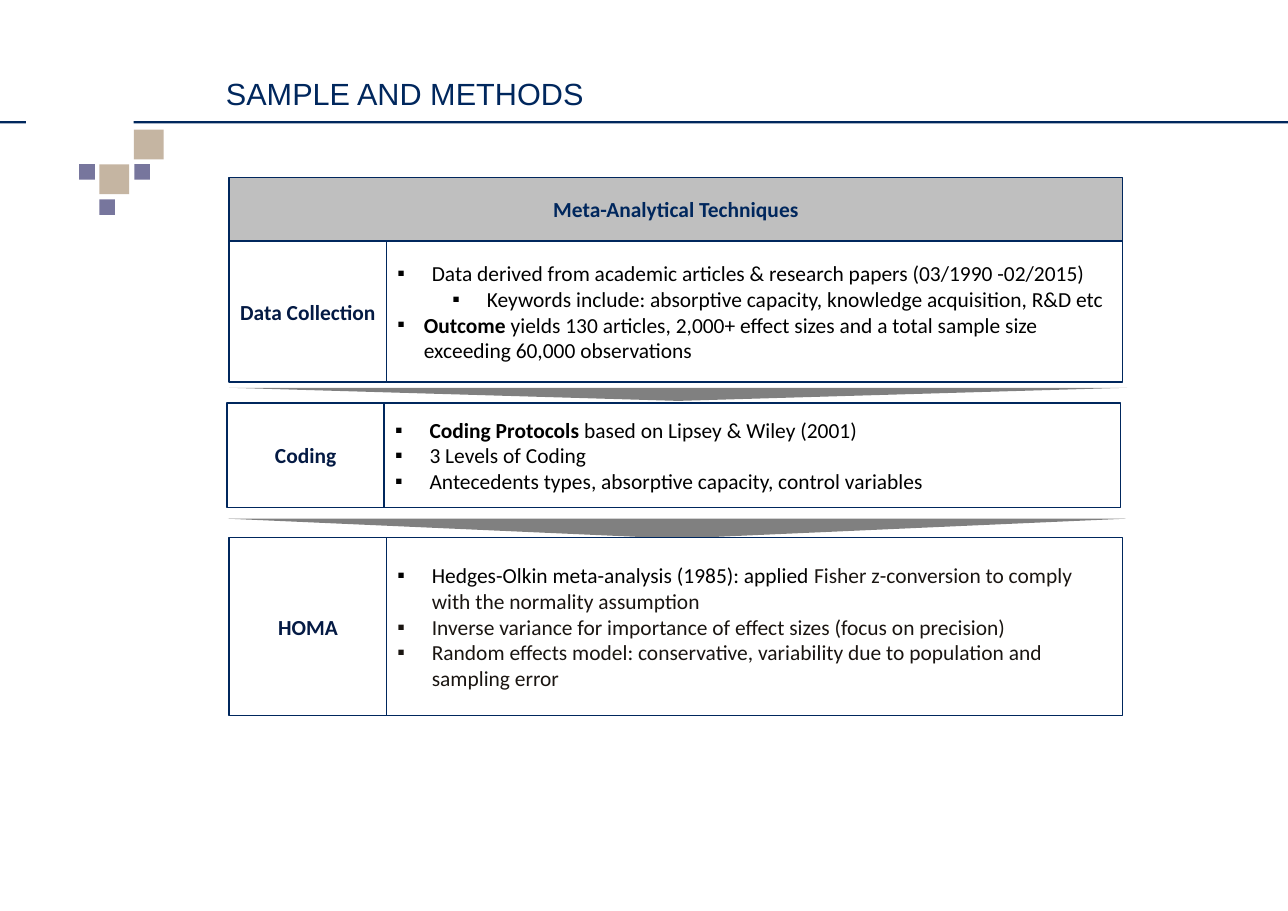
import dataclasses
import pptx
import pptx.dml.color
import pptx.enum.shapes
import pptx.enum.text
import pptx.oxml
import pptx.oxml.ns
import pptx.util

Pt = pptx.util.Pt
Shape = pptx.enum.shapes.MSO_SHAPE
Align = pptx.enum.text.PP_ALIGN
Anchor = pptx.enum.text.MSO_ANCHOR


@dataclasses.dataclass(frozen=True)
class Theme:
    navy: str = "00275D"
    label: str = "041A44"
    black: str = "000000"
    soft: str = "1A1511"
    white: str = "FFFFFF"
    silver: str = "BFBFBF"
    gray: str = "808080"
    tan: str = "C5B5A2"
    mauve: str = "77769D"
    head: str = "Arial"
    body: str = "Calibri"
    large: float = 20
    small: float = 14
    rule: float = 1


THEME = Theme()


@dataclasses.dataclass
class Item:
    """A list entry; each run is text, bold flag and an optional own colour."""
    runs: list
    left: float = 22.5
    hang: float = 22.5
    level: int = 0
    color: str = THEME.black


def tint(code):
    return pptx.dml.color.RGBColor.from_string(code)


class Page:
    def __init__(self, slide, theme):
        self.slide = slide
        self.theme = theme

    def font(self, para, name, size, color, bold=None):
        para.font.name = name
        para.font.size = Pt(size)
        para.font.color.rgb = tint(color)
        para.font.bold = bold

    def frame(self, shape, anchor, side=0.0):
        """Prepare the text frame with equal side margins and none above or below."""
        text = shape.text_frame
        text.word_wrap = True
        text.vertical_anchor = anchor
        text.margin_left = text.margin_right = Pt(side)
        text.margin_top = text.margin_bottom = 0
        return text

    def title(self, words, left, top, width, height):
        shape = self.slide.shapes.title
        shape.left, shape.top = Pt(left), Pt(top)
        shape.width, shape.height = Pt(width), Pt(height)
        text = self.frame(shape, Anchor.BOTTOM)
        text.text = words
        para = text.paragraphs[0]
        para.alignment = Align.LEFT
        self.font(para, self.theme.head, self.theme.large, self.theme.navy)

    def block(self, left, top, width, height, fill, line=None, kind=Shape.RECTANGLE):
        shape = self.slide.shapes.add_shape(
            kind, Pt(left), Pt(top), Pt(width), Pt(height))
        shape.shadow.inherit = False
        shape.fill.solid()
        shape.fill.fore_color.rgb = tint(fill)
        if line:
            shape.line.color.rgb = tint(line)
            shape.line.width = Pt(self.theme.rule)
        else:
            shape.line.fill.background()
        return shape

    def wedge(self, left, top, width, height):
        """Draw a flat triangle that points down to the next row."""
        shape = self.block(left, top, width, height, self.theme.gray,
                           kind=Shape.ISOSCELES_TRIANGLE)
        shape.rotation = 180

    def label(self, words, left, top, width, height, fill, color):
        shape = self.block(left, top, width, height, fill, self.theme.navy)
        text = self.frame(shape, Anchor.MIDDLE)
        text.text = words
        para = text.paragraphs[0]
        para.alignment = Align.CENTER
        self.font(para, self.theme.body, self.theme.small, color, True)

    def bullet(self, para, item):
        props = para._p.get_or_add_pPr()
        props.set("marL", str(Pt(item.left)))
        props.set("indent", str(-Pt(item.hang)))
        space = pptx.oxml.ns.nsdecls("a")
        for tag in ('buFont {} typeface="Arial"', 'buChar {} char="▪"'):
            props.append(pptx.oxml.parse_xml(f"<a:{tag.format(space)}/>"))

    def list(self, items, left, top, width, height):
        shape = self.block(left, top, width, height, self.theme.white, self.theme.navy)
        text = self.frame(shape, Anchor.MIDDLE, 7.2)
        for spot, item in enumerate(items):
            para = text.add_paragraph() if spot else text.paragraphs[0]
            para.alignment = Align.LEFT
            para.level = item.level
            self.bullet(para, item)
            self.font(para, self.theme.body, self.theme.small, item.color)
            for words, bold, *own in item.runs:
                run = para.add_run()
                run.text = words
                if bold:
                    run.font.bold = True
                if own:
                    run.font.color.rgb = tint(own[0])


SQUARES = [
    (51.8, 107.3, 10.2, THEME.mauve),
    (87.6, 84.8, 19.4, THEME.tan),
    (65, 107.5, 19.4, THEME.tan),
    (65, 130.3, 10.2, THEME.mauve),
    (87.8, 107.3, 10.2, THEME.mauve),
]

ROWS = [
    ("Data Collection", 149.8, 157.7, 92, [
        Item([("Data derived from academic articles & research papers "
               "(03/1990 -02/2015)", False)]),
        Item([("Keywords include: absorptive capacity, knowledge acquisition, "
               "R&D etc", False)], left=58.5, level=1),
        Item([("Outcome", True),
              (" yields 130 articles, 2,000+ effect sizes and a total sample size "
               "exceeding 60,000 observations", False)], left=17.3, hang=17.3),
    ]),
    ("Coding", 148.3, 263.5, 68.2, [
        Item([("Coding Protocols ", True), ("based on Lipsey & Wiley (2001)", False)]),
        Item([("3 Levels of Coding", False)]),
        Item([("Antecedents types, absorptive capacity, control variables", False)]),
    ]),
    ("HOMA", 149.8, 351.4, 116.3, [
        Item([("Hedges-Olkin meta-analysis (1985): applied ", False, THEME.black),
              ("Fisher z-conversion to comply with the normality assumption", False)],
             color=THEME.soft),
        Item([("Inverse variance for importance of effect sizes "
               "(focus on precision)", False)], color=THEME.soft),
        Item([("Random effects model: conservative, variability due to population "
               "and sampling error", False)], color=THEME.soft),
    ]),
]

SIDE, MAIN = 102.8, 481


def main():
    deck = pptx.Presentation()
    deck.slide_width, deck.slide_height = Pt(841.7), Pt(595.4)
    page = Page(deck.slides.add_slide(deck.slide_layouts[5]), THEME)

    for left, top, size, color in SQUARES:
        page.block(left, top, size, size, color)
    for left, width in ((0, 17), (87.4, 754.3)):
        page.block(left, 79.2, width, 1.5, THEME.navy)
    page.title("SAMPLE AND METHODS", 147.6, 22.3, 656, 50.4)

    page.wedge(149.8, 253.4, 586.8, 8.6)
    page.wedge(149, 339, 586.8, 13)
    page.label("Meta-Analytical Techniques", 149.8, 115.9, SIDE + MAIN, 41.8,
               THEME.silver, THEME.navy)
    for name, left, top, height, items in ROWS:
        page.label(name, left, top, SIDE, height, THEME.white, THEME.label)
        page.list(items, left + SIDE, top, MAIN, height)

    deck.save("out.pptx")


if __name__ == "__main__":
    main()
